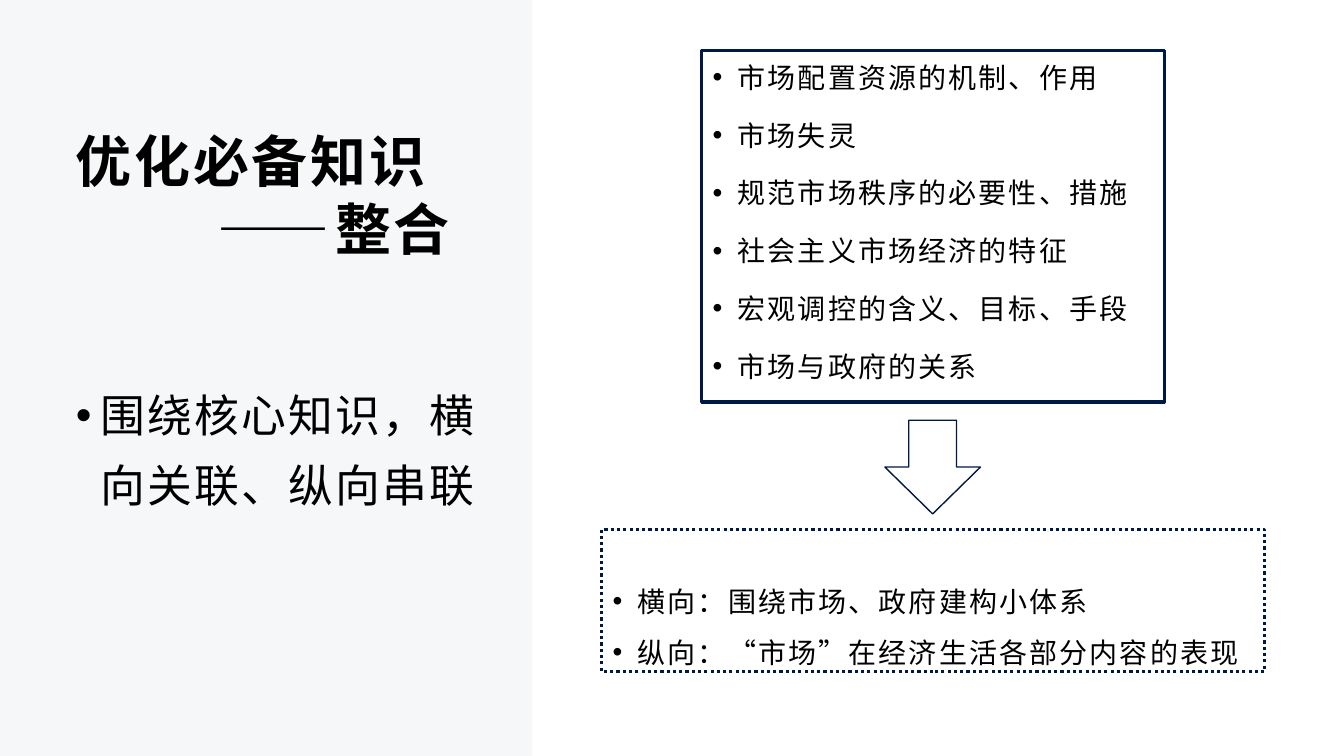
from pptx import Presentation
from pptx.dml.color import RGBColor
from pptx.enum.dml import MSO_LINE
from pptx.enum.shapes import MSO_SHAPE
from pptx.enum.text import MSO_ANCHOR, MSO_AUTO_SIZE, PP_ALIGN
from pptx.oxml.ns import qn
from pptx.util import Cm, Pt
from lxml import etree

RECTANGLE, DOWN_ARROW = MSO_SHAPE.RECTANGLE, MSO_SHAPE.DOWN_ARROW
DOTTED = MSO_LINE.ROUND_DOT
TOP, MIDDLE = MSO_ANCHOR.TOP, MSO_ANCHOR.MIDDLE
LEFT, NO_FIT = PP_ALIGN.LEFT, MSO_AUTO_SIZE.NONE

NAVY = RGBColor(0x00, 0x18, 0x47)
PANEL_GREY = RGBColor(0xF5, 0xF7, 0xF8)
BLACK = RGBColor(0x00, 0x00, 0x00)
WHITE = RGBColor(0xFF, 0xFF, 0xFF)
LATIN, CJK = "Arial", "Noto Sans CJK SC"


def write_lines(shape, box, lines, size, font, tracking, inset_top=0, anchor=TOP):
    """Place a text shape and write one paragraph per line."""
    shape.left, shape.top, shape.width, shape.height = map(Cm, box)
    frame = shape.text_frame
    frame.auto_size, frame.word_wrap = NO_FIT, True
    frame.vertical_anchor = anchor
    frame.margin_left, frame.margin_right = Cm(0.28), Cm(0.23)
    frame.margin_top, frame.margin_bottom = Cm(inset_top), 0
    frame.text = "\n".join(lines)
    for paragraph in frame.paragraphs:
        paragraph.alignment = LEFT
        paragraph.space_before = 0
        paragraph.font.size, paragraph.font.name = Pt(size), font
        paragraph.font.color.rgb = BLACK
        for run in paragraph.runs:
            properties = run.font._element
            properties.set("lang", "zh-CN")
            properties.set("spc", str(tracking))
            etree.SubElement(properties, qn("a:ea")).set("typeface", CJK)
    return frame.paragraphs


def bullet_lines(paragraphs, spacing):
    """Give paragraphs a hanging bullet and list spacing."""
    for paragraph in paragraphs:
        paragraph.line_spacing, paragraph.space_after = spacing, Pt(10)
        properties = paragraph._p.get_or_add_pPr()
        properties.set("marL", str(Cm(0.63)))
        properties.set("indent", str(-Cm(0.63)))
        bullet_font = etree.Element(qn("a:buFont"), typeface=LATIN)
        bullet = etree.Element(qn("a:buChar"), char="•")
        defaults = properties.find(qn("a:defRPr"))
        defaults.addprevious(bullet_font)
        defaults.addprevious(bullet)


presentation = Presentation()
presentation.slide_width, presentation.slide_height = Cm(33.87), Cm(19.05)
slide = presentation.slides.add_slide(presentation.slide_layouts[3])
title, topics, directions = slide.placeholders

# Grey panel behind the left column
panel = slide.shapes.add_shape(RECTANGLE, 0, 0, Cm(13.41), Cm(19.05))
panel.shadow.inherit = False
panel.fill.solid()
panel.fill.fore_color.rgb = PANEL_GREY
panel.line.fill.background()
title.element.addprevious(panel.element)

# Title, with its second line set in
title_lines = write_lines(title, (1.63, 2.77, 11, 4.24), ["优化必备知识", "——整合"],
                          40, LATIN, 200, anchor=MIDDLE)
for line in title_lines:
    line.font.bold = True
    line.line_spacing = 1.0
title_lines[1]._p.get_or_add_pPr().set("marL", str(Cm(3.58)))

# Core idea under the title
idea = slide.shapes.add_textbox(0, 0, 0, 0)
bullet_lines(write_lines(idea, (1.63, 9.37, 11, 4.22),
                         ["围绕核心知识，横向关联、纵向串联"], 32, LATIN, 150), 1.3)

# Topics to be combined
topic_lines = ["市场配置资源的机制、作用", "市场失灵", "规范市场秩序的必要性、措施",
               "社会主义市场经济的特征", "宏观调控的含义、目标、手段", "市场与政府的关系"]
bullet_lines(write_lines(topics, (17.68, 1.27, 11.66, 8.86), topic_lines,
                         20, LATIN, 150), 1.3)

# Two directions of combining them
direction_lines = ["横向：围绕市场、政府建构小体系", "纵向：“市场”在经济生活各部分内容的表现"]
bullet_lines(write_lines(directions, (15.16, 13.34, 16.71, 3.58), direction_lines,
                         20, CJK, 150, inset_top=1.3), 1.1)

for box in (topics, directions):
    box.line.color.rgb, box.line.width = NAVY, Pt(2.25)
directions.line.dash_style = DOTTED

# Arrow from topics to directions
arrow = slide.shapes.add_shape(DOWN_ARROW, Cm(22.3), Cm(10.59), Cm(2.41), Cm(2.36))
arrow.shadow.inherit = False
arrow.fill.solid()
arrow.fill.fore_color.rgb = WHITE
arrow.line.color.rgb, arrow.line.width = NAVY, Pt(1)

presentation.save("out.pptx")
